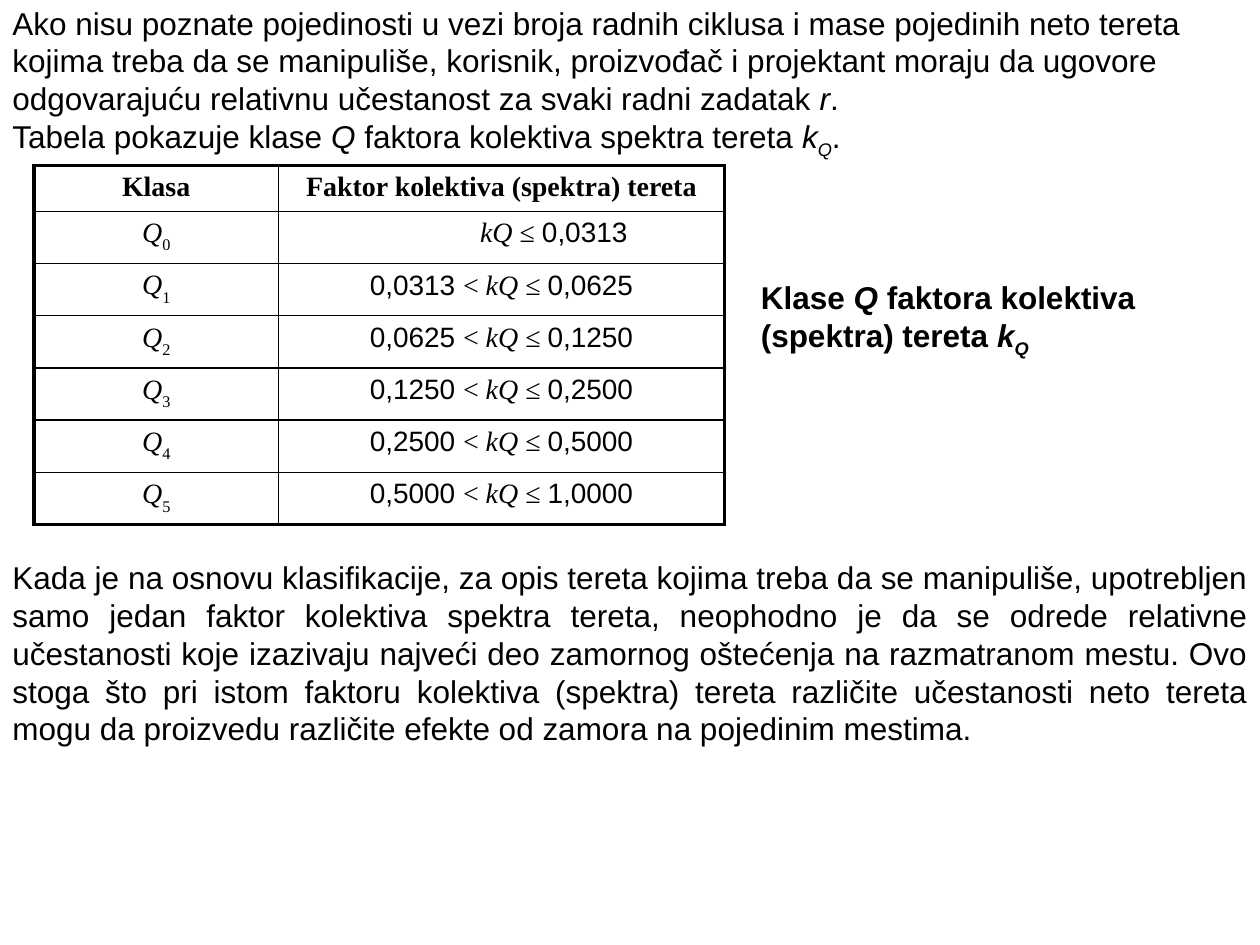
from dataclasses import dataclass

from lxml import etree
from pptx import Presentation
from pptx.dml.color import RGBColor
from pptx.enum.text import MSO_ANCHOR, MSO_AUTO_SIZE, PP_ALIGN
from pptx.oxml.ns import qn
from pptx.util import Inches, Pt

LEFT, CENTER, JUSTIFY = PP_ALIGN.LEFT, PP_ALIGN.CENTER, PP_ALIGN.JUSTIFY
MIDDLE = MSO_ANCHOR.MIDDLE
FIT_SHAPE = MSO_AUTO_SIZE.SHAPE_TO_FIT_TEXT


@dataclass(frozen=True)
class Theme:
    ink: RGBColor = RGBColor(0, 0, 0)
    body_font: str = "Arial"
    table_font: str = "Times New Roman"
    body_size: int = 18
    table_size: int = 16
    outer_line: int = 2
    inner_line: int = 1


THEME = Theme()

# A run is plain text or (text, style): i = italic, s = subscript, n = number in body font
INTRO = [
    ["Ako nisu poznate pojedinosti u vezi broja radnih ciklusa i mase pojedinih neto tereta "
     "kojima treba da se manipuliše, korisnik, proizvođač i projektant moraju da ugovore "
     "odgovarajuću relativnu učestanost za svaki radni zadatak ", ("r", "i"), "."],
    ["Tabela pokazuje klase ", ("Q", "i"), " faktora kolektiva spektra tereta ",
     ("k", "i"), ("Q", "is"), "."],
]
CAPTION = [["Klase ", ("Q", "i"), " faktora kolektiva (spektra) tereta ",
            ("k", "i"), ("Q", "is")]]
CONCLUSION = [[
    "Kada je na osnovu klasifikacije, za opis tereta kojima treba da se manipuliše, "
    "upotrebljen samo jedan faktor kolektiva spektra tereta, neophodno je da se odrede "
    "relativne učestanosti koje izazivaju najveći deo zamornog oštećenja na razmatranom "
    "mestu. Ovo stoga što pri istom faktoru kolektiva (spektra) tereta različite "
    "učestanosti neto tereta mogu da proizvedu različite efekte od zamora na pojedinim "
    "mestima."]]
HEADERS = ["Klasa", "Faktor kolektiva (spektra) tereta"]
CLASS_LIMITS = ["0,0313", "0,0625", "0,1250", "0,2500", "0,5000", "1,0000"]
COLUMN_WIDTHS = [1.94, 3.54]
FIRST_RANGE_INDENT = 0.83


def write_paragraph(paragraph, runs, font, size, bold=False, align=LEFT, sub=-25):
    paragraph.alignment = align
    paragraph.font.name = font
    paragraph.font.size = Pt(size)
    paragraph.font.bold = bold
    paragraph.font.color.rgb = THEME.ink
    for part in runs:
        text, style = (part, "") if isinstance(part, str) else part
        run = paragraph.add_run()
        run.text = text
        if "i" in style:
            run.font.italic = True
        if "n" in style:
            run.font.name = THEME.body_font
        if "s" in style:
            run.font._element.set("baseline", str(sub * 1000))


def add_text(slide, box, paragraphs, **style):
    frame = slide.shapes.add_textbox(*map(Inches, box)).text_frame
    frame.word_wrap = True
    frame.auto_size = FIT_SHAPE
    frame.vertical_anchor = MIDDLE
    for index, runs in enumerate(paragraphs):
        paragraph = frame.add_paragraph() if index else frame.paragraphs[0]
        write_paragraph(paragraph, runs, THEME.body_font, THEME.body_size, **style)


def add_border(cell, side, width):
    line = etree.SubElement(cell._tc.get_or_add_tcPr(), qn(f"a:ln{side}"), w=str(Pt(width)))
    fill = etree.SubElement(line, qn("a:solidFill"))
    etree.SubElement(fill, qn("a:srgbClr"), val=str(THEME.ink))


def class_rows():
    """Each class starts at the limit where the one before it ends."""
    lower_limits = [None] + CLASS_LIMITS[:-1]
    for index, (lower, upper) in enumerate(zip(lower_limits, CLASS_LIMITS)):
        start = [(f"{lower} ", "n"), "< "] if lower else []
        yield [[("Q", "i"), (str(index), "s")],
               start + [("kQ", "i"), " ≤ ", (upper, "n")]]


def add_class_table(slide):
    rows = [[[header] for header in HEADERS], *class_rows()]
    last_row, last_column = len(rows) - 1, len(HEADERS) - 1
    table = slide.shapes.add_table(
        len(rows), len(HEADERS), Inches(0.27), Inches(1.31),
        Inches(sum(COLUMN_WIDTHS)), Inches(2.56)).table
    table.first_row = table.horz_banding = False
    for column, width in zip(table.columns, COLUMN_WIDTHS):
        column.width = Inches(width)
    for r, row in enumerate(rows):
        for c, runs in enumerate(row):
            cell = table.cell(r, c)
            write_paragraph(cell.text_frame.paragraphs[0], runs, THEME.table_font,
                            THEME.table_size, bold=r == 0, align=CENTER, sub=-30)
            outer_sides = {"L": c == 0, "R": c == last_column,
                           "T": r == 0, "B": r == last_row}
            for side, outer in outer_sides.items():
                add_border(cell, side, THEME.outer_line if outer else THEME.inner_line)
            cell.fill.background()
    first_range = table.cell(1, 1).text_frame.paragraphs[0]
    first_range._p.get_or_add_pPr().set("marL", str(Inches(FIRST_RANGE_INDENT)))


def main():
    deck = Presentation()
    deck.slide_width, deck.slide_height = Inches(10), Inches(7.5)
    slide = deck.slides.add_slide(deck.slide_layouts[6])
    add_text(slide, (0, 0, 10, 1.3), INTRO)
    add_class_table(slide)
    add_text(slide, (5.94, 2.18, 3.57, 0.7), CAPTION, bold=True)
    add_text(slide, (0, 4.38, 10, 1.6), CONCLUSION, align=JUSTIFY)
    deck.save("out.pptx")


if __name__ == "__main__":
    main()
